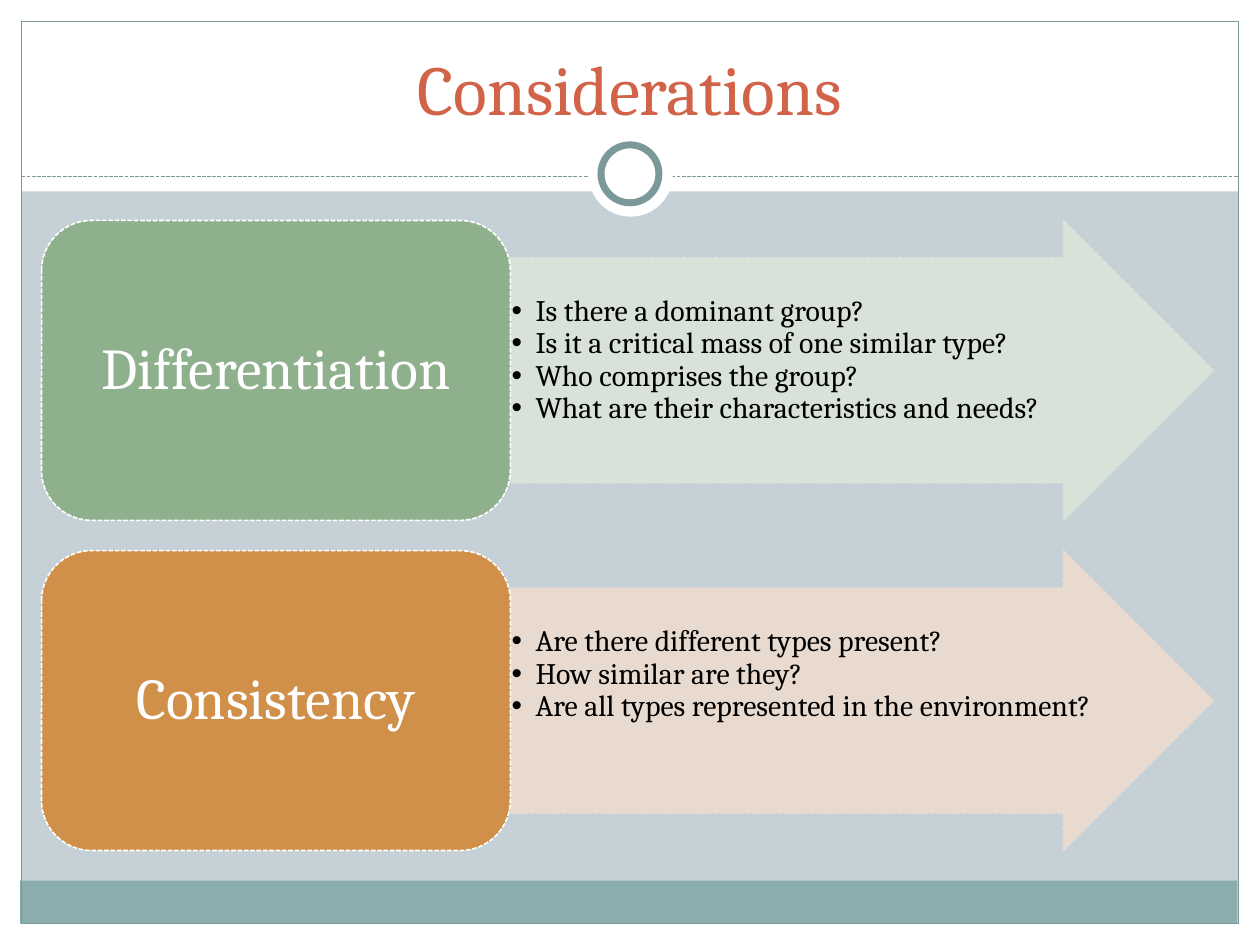
from dataclasses import dataclass

from lxml.etree import SubElement
from pptx import Presentation
from pptx.dml.color import RGBColor
from pptx.enum.dml import MSO_LINE
from pptx.enum.shapes import MSO_CONNECTOR, MSO_SHAPE as Preset
from pptx.enum.text import MSO_ANCHOR as Anchor, MSO_AUTO_SIZE as AutoSize, PP_ALIGN as Align
from pptx.oxml.ns import qn
from pptx.util import Inches, Pt

FONT = "Cambria"
WHITE = RGBColor(0xFF, 0xFF, 0xFF)
BLACK = RGBColor(0, 0, 0)
BACKGROUND = RGBColor(0xC5, 0xD1, 0xD7)
FOOTER = RGBColor(0x8C, 0xAD, 0xAE)
FRAME = RGBColor(0x7C, 0x99, 0x9A)
TITLE = RGBColor(0xD1, 0x63, 0x49)
GREEN = RGBColor(0x8F, 0xB0, 0x8C)
PALE_GREEN = RGBColor(0xDB, 0xE4, 0xDA)
ORANGE = RGBColor(0xD1, 0x90, 0x49)
PALE_ORANGE = RGBColor(0xEE, 0xDB, 0xCF)

ROW_TOP, ROW_HEIGHT, ROW_STEP = 1.75, 2.38, 2.62
LABEL_LEFT, LABEL_WIDTH = 0.33, 3.72
ARROW_LEFT, ARROW_WIDTH = LABEL_LEFT + LABEL_WIDTH, 5.58


@dataclass
class Topic:
    label: str
    color: RGBColor
    pale: RGBColor
    questions: list[str]


TOPICS = [
    Topic("Differentiation", GREEN, PALE_GREEN, [
        "Is there a dominant group?",
        "Is it a critical mass of one similar type?",
        "Who comprises the group?",
        "What are their characteristics and needs?",
    ]),
    Topic("Consistency", ORANGE, PALE_ORANGE, [
        "Are there different types present?",
        "How similar are they?",
        "Are all types represented in the environment?",
    ]),
]


def add_preset(slide, preset, box: tuple, fill=None, line=None, width=0.75, dash=None):
    shape = slide.shapes.add_shape(preset, *map(Inches, box))
    shape.shadow.inherit = False
    if fill is None:
        shape.fill.background()
    else:
        shape.fill.solid()
        shape.fill.fore_color.rgb = fill
    if line is None:
        shape.line.fill.background()
    else:
        shape.line.color.rgb = line
        shape.line.width = Pt(width)
        if dash is not None:
            shape.line.dash_style = dash
    return shape


def set_opacity(shape, percent: int) -> None:
    for color in shape._element.spPr.iter(qn("a:srgbClr")):
        SubElement(color, qn("a:alpha"), val=str(percent * 1000))


def add_run(paragraph, text: str, size: float, color: RGBColor) -> None:
    run = paragraph.add_run()
    run.text = text
    run.font.name = FONT
    run.font.size = Pt(size)
    run.font.color.rgb = color


def place(slide, placeholder, box: tuple, anchor) -> None:
    """Move a placeholder and bring it in front of what is drawn so far."""
    placeholder.left, placeholder.top, placeholder.width, placeholder.height = map(Inches, box)
    slide.shapes._spTree.append(placeholder._element)
    frame = placeholder.text_frame
    frame.word_wrap = True
    frame.auto_size = AutoSize.NONE
    frame.vertical_anchor = anchor


def add_backdrop(slide) -> None:
    # White margins, header and footer band
    for box in [(0, 7.33, 10, 0.17), (0, 0, 10, 1.52), (0, 0, 0.17, 7.5), (9.83, 0, 0.17, 7.5)]:
        add_preset(slide, Preset.RECTANGLE, box, WHITE)
    add_preset(slide, Preset.RECTANGLE, (0.16, 6.99, 9.66, 0.34), FOOTER)
    add_preset(slide, Preset.RECTANGLE, (0.17, 0.17, 9.66, 7.16), line=FRAME)

    # Dashed divider with a ring at its middle
    divider = slide.shapes.add_connector(
        MSO_CONNECTOR.STRAIGHT, Inches(0.17), Inches(1.4), Inches(9.83), Inches(1.4))
    divider.line.color.rgb = FRAME
    divider.line.width = Pt(0.75)
    divider.line.dash_style = MSO_LINE.SQUARE_DOT
    SubElement(divider._element.spPr, qn("a:effectLst"))
    add_preset(slide, Preset.OVAL, (4.67, 1.05, 0.67, 0.67), WHITE)
    add_preset(slide, Preset.OVAL, (4.77, 1.15, 0.46, 0.46), WHITE, FRAME, 4)


def add_title(slide, text: str) -> None:
    title = slide.shapes.title
    place(slide, title, (0.33, 0.25, 9.33, 0.83), Anchor.BOTTOM)
    paragraph = title.text_frame.paragraphs[0]
    paragraph.alignment = Align.CENTER
    add_run(paragraph, text, 40, TITLE)


def add_questions(slide, body, questions: list[str], top: float) -> None:
    place(slide, body, (ARROW_LEFT, top + 0.3, 4.69, 1.79), Anchor.TOP)
    frame = body.text_frame
    frame.margin_left = frame.margin_right = frame.margin_bottom = Inches(0.01)
    frame.margin_top = Inches(0.3)
    for index, question in enumerate(questions):
        paragraph = frame.paragraphs[0] if index == 0 else frame.add_paragraph()
        paragraph.line_spacing = 0.9
        paragraph.space_before = paragraph.space_after = Pt(0)
        properties = paragraph._p.get_or_add_pPr()
        properties.set("marL", str(Inches(0.19)))
        properties.set("indent", str(Inches(-0.19)))
        SubElement(properties, qn("a:buChar"), char="•")
        add_run(paragraph, question, 17, BLACK)


def add_topic(slide, topic: Topic, body, top: float) -> None:
    arrow = add_preset(slide, Preset.RIGHT_ARROW, (ARROW_LEFT, top, ARROW_WIDTH, ROW_HEIGHT),
                       topic.pale, topic.pale, 0.9, MSO_LINE.SQUARE_DOT)
    arrow.adjustments[0] = 0.75
    arrow.adjustments[1] = 0.5
    set_opacity(arrow, 90)
    add_questions(slide, body, topic.questions, top)

    label = add_preset(slide, Preset.ROUNDED_RECTANGLE, (LABEL_LEFT, top, LABEL_WIDTH, ROW_HEIGHT),
                       topic.color, WHITE, 0.9, MSO_LINE.SQUARE_DOT)
    label.text_frame.word_wrap = True
    label.text_frame.vertical_anchor = Anchor.MIDDLE
    paragraph = label.text_frame.paragraphs[0]
    paragraph.alignment = Align.CENTER
    paragraph.line_spacing = 0.9
    add_run(paragraph, topic.label, 33, WHITE)


def main() -> None:
    presentation = Presentation()
    presentation.slide_width, presentation.slide_height = Inches(10), Inches(7.5)
    two_content = presentation.slide_layouts[3]
    slide = presentation.slides.add_slide(two_content)
    slide.background.fill.solid()
    slide.background.fill.fore_color.rgb = BACKGROUND
    bodies = [slide.placeholders[1], slide.placeholders[2]]

    add_backdrop(slide)
    add_title(slide, "Considerations")
    for row, (topic, body) in enumerate(zip(TOPICS, bodies)):
        add_topic(slide, topic, body, ROW_TOP + row * ROW_STEP)
    presentation.save("out.pptx")


if __name__ == "__main__":
    main()
